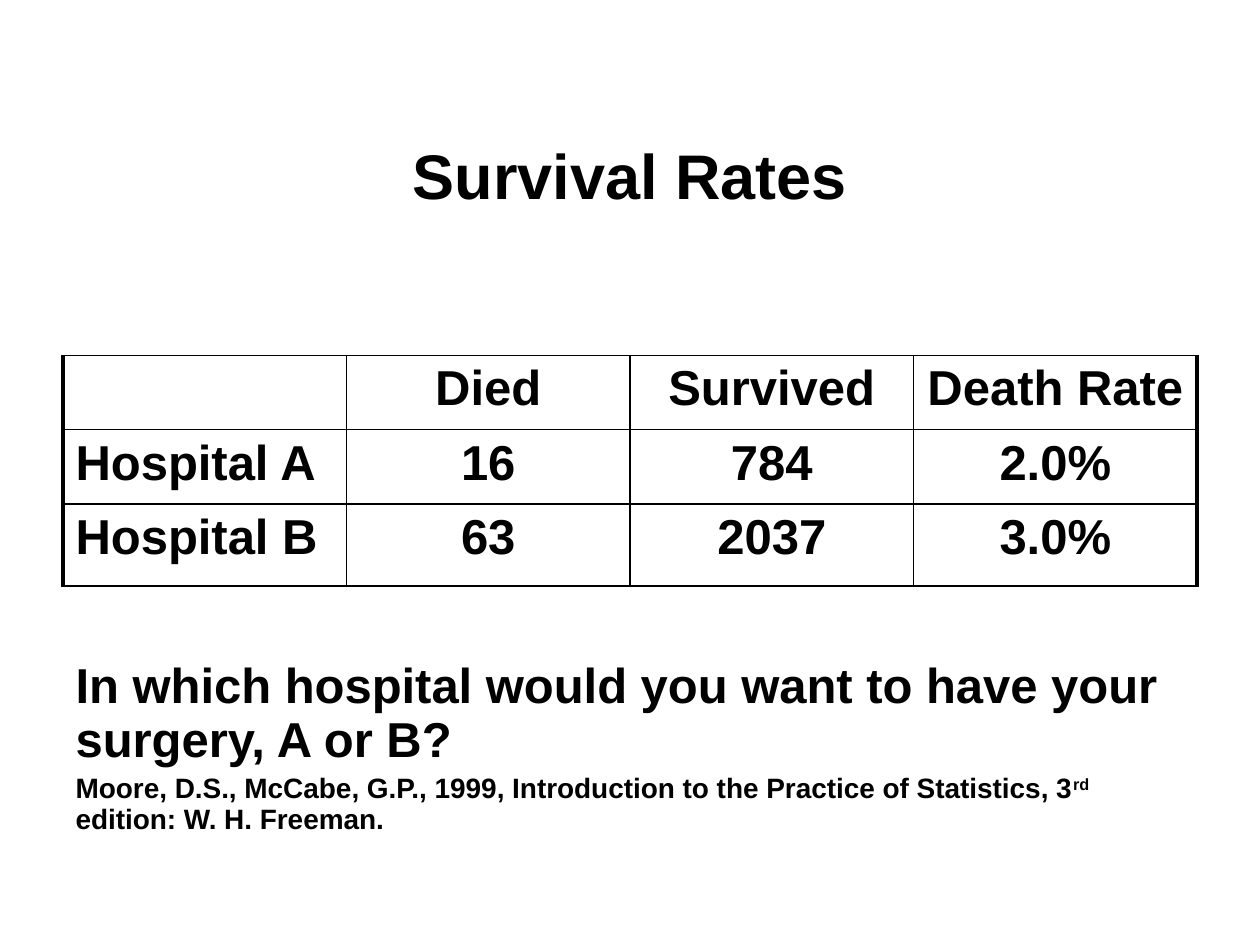
from dataclasses import dataclass

from lxml import etree
from pptx import Presentation
from pptx.dml.color import RGBColor
from pptx.enum.text import MSO_ANCHOR, PP_ALIGN
from pptx.oxml.ns import qn
from pptx.util import Inches, Pt

LEFT, CENTER = PP_ALIGN.LEFT, PP_ALIGN.CENTER
TOP, BOTTOM = MSO_ANCHOR.TOP, MSO_ANCHOR.BOTTOM

TITLE = "Survival Rates"
RATES = [
    ("", "Died", "Survived", "Death Rate"),
    ("Hospital A", "16", "784", "2.0%"),
    ("Hospital B", "63", "2037", "3.0%"),
]
QUESTION = "In which hospital would you want to have your surgery, A or B?"
CITATION = [
    ("Moore, D.S., McCabe, G.P., 1999, Introduction to the Practice of Statistics, 3", 0),
    ("rd", 30),
    (" edition: W. H. Freeman.", 0),
]


@dataclass(frozen=True)
class Theme:
    font: str = "Arial"
    ink: str = "000000"
    title: int = 36
    body: int = 28
    citation: int = 16
    rule: float = 1
    frame: float = 2.25


THEME = Theme()
TABLE_LEFT, TABLE_TOP, COLUMN_WIDTH = 0.5, 0.5, 2.25
ROW_HEIGHTS = [2.32, 0.59, 0.59, 0.65, 2.05]
COLUMNS = len(RATES[0])
LAST_ROW = len(ROW_HEIGHTS) - 1


def write(paragraph, text, size=THEME.body, align=LEFT, before=0, baseline=0):
    """Append a formatted run; baseline is a raise in percent."""
    paragraph.alignment = align
    if before:
        paragraph.space_before = Pt(before)
    run = paragraph.add_run()
    run.text = text
    run.font.name, run.font.size, run.font.bold = THEME.font, Pt(size), True
    run.font.color.rgb = RGBColor.from_string(THEME.ink)
    if baseline:
        run._r.get_or_add_rPr().set("baseline", str(baseline * 1000))


def set_borders(cell, **widths):
    """Draw the sides given in points and clear the others."""
    properties = cell._tc.get_or_add_tcPr()
    for position, side in enumerate("LRTB"):
        line = etree.Element(qn(f"a:ln{side}"))
        width = widths.get(side, 0)
        if width:
            line.set("w", str(Pt(width)))
            fill = etree.SubElement(line, qn("a:solidFill"))
            etree.SubElement(fill, qn("a:srgbClr"), val=THEME.ink)
        else:
            etree.SubElement(line, qn("a:noFill"))
        properties.insert(position, line)


def add_grid(slide):
    grid = slide.shapes.add_table(
        len(ROW_HEIGHTS), COLUMNS, Inches(TABLE_LEFT), Inches(TABLE_TOP),
        Inches(COLUMNS * COLUMN_WIDTH), Inches(sum(ROW_HEIGHTS)),
    ).table
    grid.first_row = grid.horz_banding = False
    for column in grid.columns:
        column.width = Inches(COLUMN_WIDTH)
    for row, height in zip(grid.rows, ROW_HEIGHTS):
        row.height = Inches(height)
    for cell in grid.iter_cells():
        cell.fill.background()
    for row in (0, LAST_ROW):
        grid.cell(row, 0).merge(grid.cell(row, COLUMNS - 1))
        side = "B" if row == 0 else "T"
        for column in range(COLUMNS):
            set_borders(grid.cell(row, column), **{side: THEME.rule})
    return grid


def fill_rates(grid):
    for row, values in enumerate(RATES, start=1):
        for column, value in enumerate(values):
            cell = grid.cell(row, column)
            set_borders(
                cell, T=THEME.rule, B=THEME.rule,
                L=THEME.frame if column == 0 else THEME.rule,
                R=THEME.frame if column == COLUMNS - 1 else THEME.rule,
            )
            if value:
                write(cell.text_frame.paragraphs[0], value,
                      align=CENTER if column else LEFT)


def main():
    presentation = Presentation()
    presentation.slide_width, presentation.slide_height = Inches(10), Inches(7.5)
    slide = presentation.slides.add_slide(presentation.slide_layouts[6])
    grid = add_grid(slide)

    title = grid.cell(0, 0)
    title.vertical_anchor, title.margin_bottom = BOTTOM, Inches(1.13)
    write(title.text_frame.paragraphs[0], TITLE, size=THEME.title, align=CENTER)

    fill_rates(grid)

    closing = grid.cell(LAST_ROW, 0)
    closing.vertical_anchor, closing.margin_top = TOP, Inches(0.58)
    closing.margin_bottom = 0
    write(closing.text_frame.paragraphs[0], QUESTION)
    citation = closing.text_frame.add_paragraph()
    for text, baseline in CITATION:
        write(citation, text, size=THEME.citation, before=3, baseline=baseline)

    presentation.save("out.pptx")


if __name__ == "__main__":
    main()
